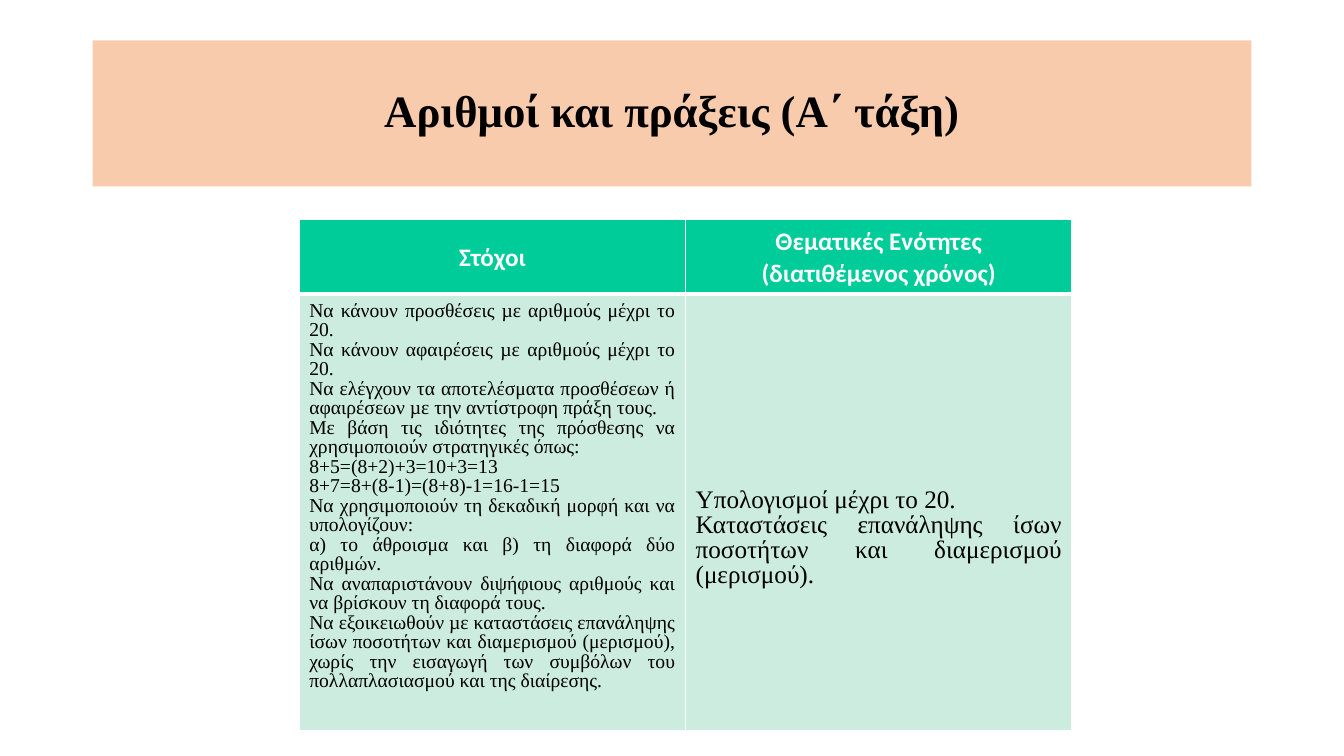
from dataclasses import dataclass

from lxml import etree
from pptx import Presentation
from pptx import util as u
from pptx.dml.color import RGBColor
from pptx.enum import text
from pptx.oxml import ns


@dataclass(frozen=True)
class Theme:
    banner: str = "F8CBAD"
    header: str = "00CC99"
    body: str = "CBECDE"
    white: str = "FFFFFF"
    black: str = "000000"
    serif: str = "Times New Roman"
    sans: str = "Calibri"
    title_size: int = 32
    large_size: int = 18
    small_size: int = 14
    thin: float = 0.91
    thick: float = 2.95


THEME = Theme()
ALIGN = text.PP_ALIGN
ANCHOR = text.MSO_ANCHOR

TITLE = "Αριθμοί και πράξεις (Α΄ τάξη)"
HEADERS = ["Στόχοι", "Θεματικές Ενότητες\n(διατιθέμενος χρόνος)"]
GOALS = [
    "Να κάνουν προσθέσεις µε αριθμούς μέχρι το 20.",
    "Να κάνουν αφαιρέσεις µε αριθμούς μέχρι το 20.",
    "Να ελέγχουν τα αποτελέσματα προσθέσεων ή αφαιρέσεων µε την αντίστροφη πράξη τους.",
    "Με βάση τις ιδιότητες της πρόσθεσης να χρησιμοποιούν στρατηγικές όπως:",
    "8+5=(8+2)+3=10+3=13",
    "8+7=8+(8-1)=(8+8)-1=16-1=15",
    "Να χρησιμοποιούν τη δεκαδική μορφή και να υπολογίζουν:",
    "α) το άθροισμα και β) τη διαφορά δύο αριθμών.",
    "Να αναπαριστάνουν διψήφιους αριθμούς και να βρίσκουν τη διαφορά τους.",
    "Να εξοικειωθούν µε καταστάσεις επανάληψης ίσων ποσοτήτων και διαμερισμού "
    "(μερισμού), χωρίς την εισαγωγή των συμβόλων του πολλαπλασιασμού και της διαίρεσης.",
]
UNITS = [
    "Υπολογισμοί μέχρι το 20.",
    "Καταστάσεις επανάληψης ίσων ποσοτήτων και διαμερισμού (μερισμού).",
]


def set_fill(item, color):
    item.fill.solid()
    item.fill.fore_color.rgb = RGBColor.from_string(color)


def write(frame, words, size, font, color, align, spacing, bold=False):
    frame.text = words
    for paragraph in frame.paragraphs:
        paragraph.alignment = align
        paragraph.line_spacing = spacing
        paragraph.space_before = paragraph.space_after = u.Pt(0)
        for run in paragraph.runs:
            run.font.size = u.Pt(size)
            run.font.name = font
            run.font.bold = bold
            run.font.color.rgb = RGBColor.from_string(color)


def set_borders(cell, top, bottom):
    properties = cell._tc.get_or_add_tcPr()
    widths = {"lnL": THEME.thin, "lnR": THEME.thin, "lnT": top, "lnB": bottom}
    # Borders come before the fill in the cell properties
    for index, (tag, width) in enumerate(widths.items()):
        line = etree.Element(ns.qn(f"a:{tag}"), w=str(u.Pt(width)))
        fill = etree.SubElement(line, ns.qn("a:solidFill"))
        etree.SubElement(fill, ns.qn("a:srgbClr"), val=THEME.white)
        properties.insert(index, line)


def add_title(slide, left, top, width, height):
    title = slide.shapes.title
    title.left, title.top = u.Inches(left), u.Inches(top)
    title.width, title.height = u.Inches(width), u.Inches(height)
    set_fill(title, THEME.banner)
    frame = title.text_frame
    frame.auto_size = text.MSO_AUTO_SIZE.NONE
    frame.vertical_anchor = ANCHOR.MIDDLE
    write(frame, TITLE, THEME.title_size, THEME.serif, THEME.black,
          ALIGN.CENTER, 0.9, bold=True)


def add_goals_table(slide, left, top, width, row_heights):
    table = slide.shapes.add_table(
        2, 2, u.Inches(left), u.Inches(top),
        u.Inches(width), u.Inches(sum(row_heights))).table
    for row, height in zip(table.rows, row_heights):
        row.height = u.Inches(height)

    # Header row
    for column, words in enumerate(HEADERS):
        cell = table.cell(0, column)
        set_fill(cell, THEME.header)
        set_borders(cell, THEME.thin, THEME.thick)
        cell.vertical_anchor = ANCHOR.MIDDLE
        write(cell.text_frame, words, THEME.large_size, THEME.sans, THEME.white,
              ALIGN.CENTER, 1.04, bold=True)

    # Goals, and the units set lower in their cell
    columns = [(GOALS, THEME.small_size, 0.08), (UNITS, THEME.large_size, 1.93)]
    for column, (lines, size, margin) in enumerate(columns):
        cell = table.cell(1, column)
        set_fill(cell, THEME.body)
        set_borders(cell, THEME.thick, THEME.thin)
        cell.vertical_anchor = ANCHOR.TOP
        cell.margin_top = u.Inches(margin)
        write(cell.text_frame, "\n".join(lines), size, THEME.serif, THEME.black,
              ALIGN.JUSTIFY, 0.9)


def main():
    presentation = Presentation()
    presentation.slide_width = u.Inches(13.34)
    presentation.slide_height = u.Inches(7.5)
    slide = presentation.slides.add_slide(presentation.slide_layouts[5])
    add_title(slide, 0.92, 0.4, 11.5, 1.45)
    add_goals_table(slide, 2.97, 2.18, 7.67, [0.73, 4.33])
    presentation.save("out.pptx")


if __name__ == "__main__":
    main()
